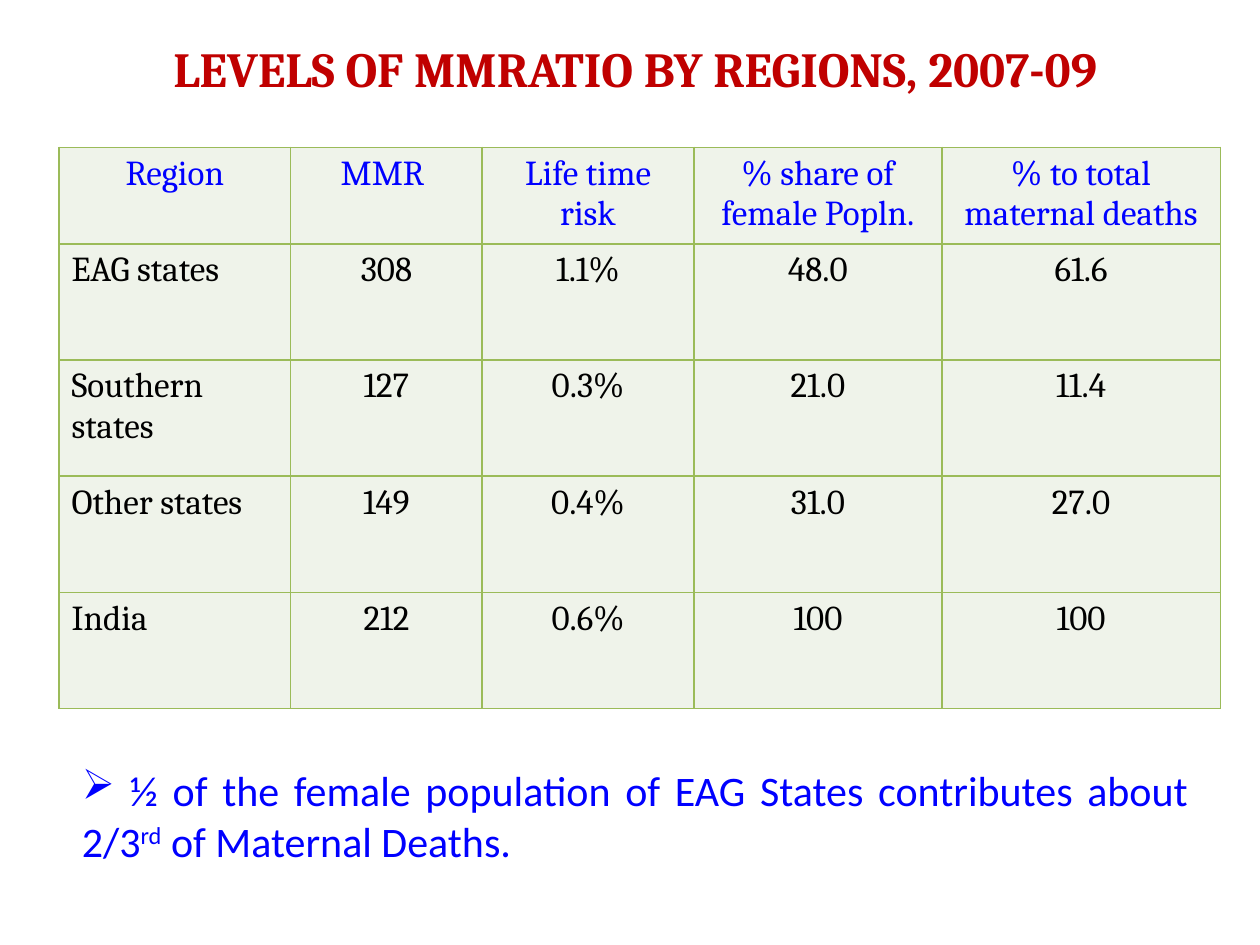
from dataclasses import dataclass

import pptx
import pptx.dml.color
import pptx.enum.text
import pptx.oxml
import pptx.oxml.ns
import pptx.util
from pptx.util import Cm, Pt

ALIGN = pptx.enum.text.PP_ALIGN
ANCHOR = pptx.enum.text.MSO_ANCHOR


@dataclass(frozen=True)
class Theme:
    heading_font: str = "Cambria"
    note_font: str = "Calibri"
    title_size: int = 28
    table_size: int = 20
    note_size: int = 24
    title: str = "C00000"
    accent: str = "0000FF"
    body: str = "000000"
    cell: str = "EFF3EA"
    border: str = "9BBB59"
    border_width: int = 1


THEME = Theme()

COLUMN_WIDTHS = (4.67, 3.86, 4.27, 5.0, 5.61)
HEADER_HEIGHT, REGION_HEIGHT = 1.95, 2.34
REGION_ROWS = (
    ("Region", "MMR ", "Life time risk", "% share of female Popln.",
     "% to total maternal deaths"),
    ("EAG states", "308", "1.1%", "48.0", "61.6"),
    ("Southern states", "127", "0.3%", "21.0", "11.4"),
    ("Other states", "149", "0.4%", "31.0", "27.0"),
    ("India", "212", "0.6%", "100", "100"),
)


def rgb(hex_colour):
    return pptx.dml.color.RGBColor.from_string(hex_colour)


def add_run(paragraph, text, font, size, colour, bold=False):
    run = paragraph.add_run()
    run.text = text
    run.font.name = font
    run.font.size = Pt(size)
    run.font.color.rgb = rgb(colour)
    run.font.bold = bold
    return run


def add_text_frame(slide, left, top, width, height):
    frame = slide.shapes.add_textbox(
        Cm(left), Cm(top), Cm(width), Cm(height)).text_frame
    frame.word_wrap = True
    return frame


def add_title(slide, text):
    frame = add_text_frame(slide, 1.47, 0.64, 22.66, 1.47)
    frame.vertical_anchor = ANCHOR.MIDDLE
    heading = frame.paragraphs[0]
    heading.alignment = ALIGN.CENTER
    add_run(heading, text, THEME.heading_font, THEME.title_size,
            THEME.title, bold=True)


def set_borders(cell):
    """Draw all four edges; lines must precede the fill in the cell XML."""
    properties = cell._tc.get_or_add_tcPr()
    for position, edge in enumerate(("lnL", "lnR", "lnT", "lnB")):
        line = pptx.oxml.parse_xml(
            f'<a:{edge} {pptx.oxml.ns.nsdecls("a")} w="{Pt(THEME.border_width)}">'
            f'<a:solidFill><a:srgbClr val="{THEME.border}"/></a:solidFill>'
            f'</a:{edge}>')
        properties.insert(position, line)


def fill_cell(cell, text, colour, alignment):
    cell.fill.solid()
    cell.fill.fore_color.rgb = rgb(THEME.cell)
    set_borders(cell)
    paragraph = cell.text_frame.paragraphs[0]
    paragraph.alignment = alignment
    add_run(paragraph, text, THEME.heading_font, THEME.table_size, colour)


def add_region_table(slide):
    row_heights = [HEADER_HEIGHT] + [REGION_HEIGHT] * (len(REGION_ROWS) - 1)
    table = slide.shapes.add_table(
        len(REGION_ROWS), len(COLUMN_WIDTHS), Cm(1.19), Cm(2.97),
        Cm(sum(COLUMN_WIDTHS)), Cm(sum(row_heights))).table
    table.horz_banding = False
    for column, width in zip(table.columns, COLUMN_WIDTHS):
        column.width = Cm(width)
    for r, (height, values) in enumerate(zip(row_heights, REGION_ROWS)):
        table.rows[r].height = Cm(height)
        for c, value in enumerate(values):
            is_header, is_region = r == 0, c == 0
            fill_cell(table.cell(r, c), value,
                      THEME.accent if is_header else THEME.body,
                      ALIGN.LEFT if is_region and not is_header else ALIGN.CENTER)


def set_bullet(paragraph, character):
    paragraph._p.get_or_add_pPr().append(pptx.oxml.parse_xml(
        f'<a:buChar {pptx.oxml.ns.nsdecls("a")} char="{character}"/>'))


def add_note(slide, pieces):
    """Add a bulleted note from (text, is_superscript) pieces."""
    frame = add_text_frame(slide, 1.4, 15.29, 22.81, 2.31)
    frame.auto_size = pptx.enum.text.MSO_AUTO_SIZE.SHAPE_TO_FIT_TEXT
    note = frame.paragraphs[0]
    note.alignment = ALIGN.JUSTIFY
    set_bullet(note, "➢")
    for text, is_superscript in pieces:
        run = add_run(note, text, THEME.note_font, THEME.note_size, THEME.accent)
        if is_superscript:
            run.font._element.set("baseline", "30000")


def main():
    presentation = pptx.Presentation()
    presentation.slide_width, presentation.slide_height = Cm(25.4), Cm(19.05)
    slide = presentation.slides.add_slide(presentation.slide_layouts[6])
    add_region_table(slide)
    add_title(slide, "LEVELS OF MMRATIO BY REGIONS, 2007-09")
    add_note(slide, (
        (" ½ of the female population of EAG States contributes about 2/3", False),
        ("rd", True),
        (" of Maternal Deaths.", False),
    ))
    presentation.save("out.pptx")


if __name__ == "__main__":
    main()
